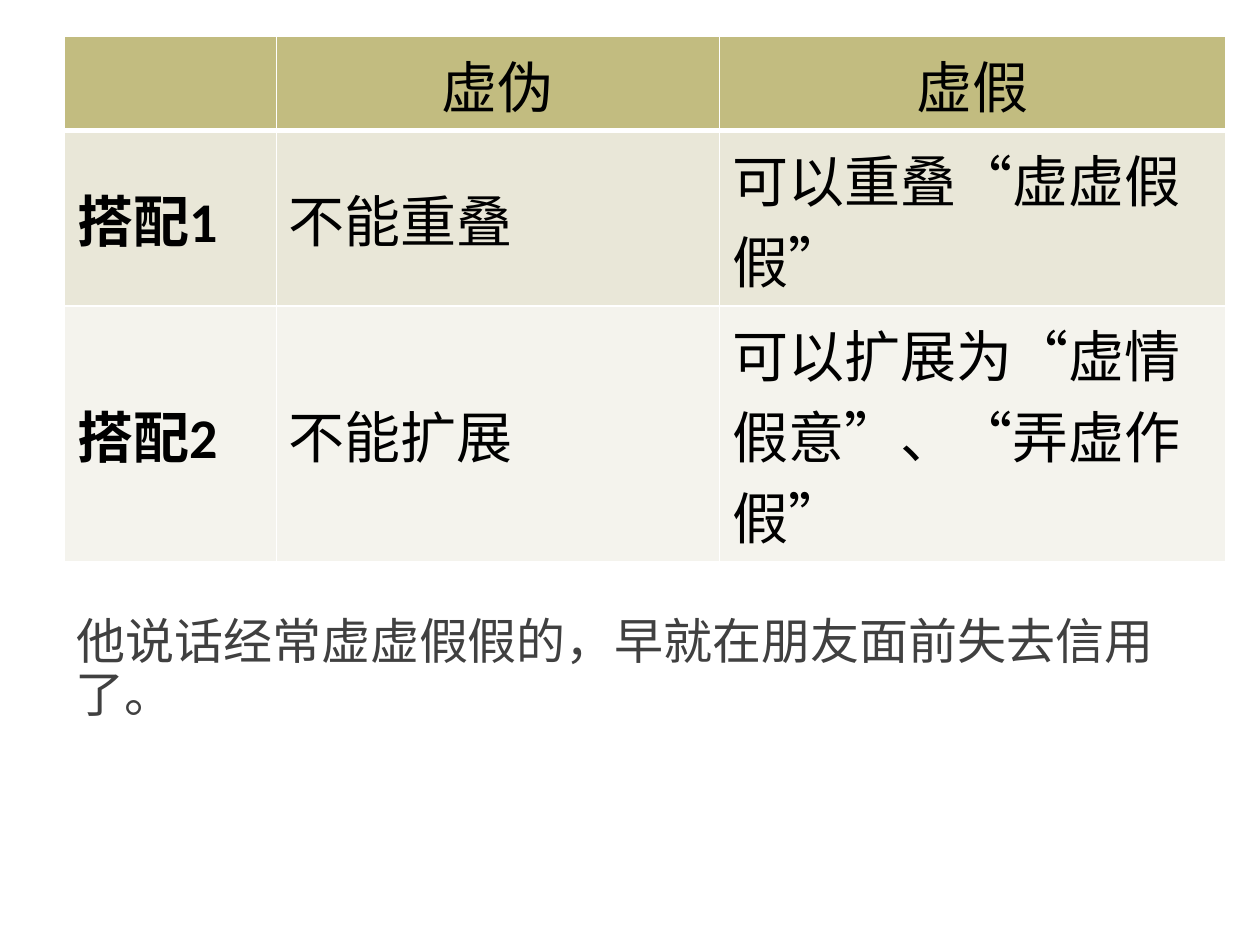
from lxml import etree
from pptx import Presentation
from pptx.dml.color import RGBColor
from pptx.enum.text import MSO_ANCHOR, MSO_AUTO_SIZE, PP_ALIGN
from pptx.oxml.ns import qn
from pptx.util import Cm, Pt

CENTER, LEFT = PP_ALIGN.CENTER, PP_ALIGN.LEFT
TOP, MIDDLE = MSO_ANCHOR.TOP, MSO_ANCHOR.MIDDLE
NO_AUTOFIT = MSO_AUTO_SIZE.NONE

FONT = "Calibri"
COLORS = {
    "header": "C2BC80",
    "odd_row": "E9E7D8",
    "even_row": "F4F3ED",
    "border": "FFFFFF",
    "table_text": "000000",
    "example_text": "404040",
    "bullet": "E48312",
}
HEADER_BORDERS = {"lnL": 1, "lnR": 1, "lnT": 1, "lnB": 3}

COLUMN_WIDTHS = (4.27, 8.94, 10.21)
ROW_HEIGHTS = (1.57, 3.02, 3.02)
ROW_FILLS = ("header", "odd_row", "even_row")
COMPARISON = (
    ("", "虚伪", "虚假"),
    ("搭配1", "不能重叠", "可以重叠“虚虚假假”"),
    ("搭配2", "不能扩展", "可以扩展为“虚情假意”、“弄虚作假”"),
)
EXAMPLE = "他说话经常虚虚假假的，早就在朋友面前失去信用了。"


def write_text(text_frame, text, size, color, bold=False, align=LEFT):
    paragraph = text_frame.paragraphs[0]
    paragraph.alignment = align
    run = paragraph.add_run()
    run.text = text
    run.font.name = FONT
    run.font.size = Pt(size)
    run.font.bold = bold
    run.font.color.rgb = RGBColor.from_string(COLORS[color])
    return paragraph


def add_color(parent, color):
    etree.SubElement(parent, qn("a:srgbClr"), val=COLORS[color])


def set_borders(cell, borders):
    """Put the border lines ahead of the cell's fill, as the schema asks."""
    properties = cell._tc.get_or_add_tcPr()
    for position, (side, width) in enumerate(borders.items()):
        line = etree.Element(qn(f"a:{side}"), w=str(Pt(width)))
        add_color(etree.SubElement(line, qn("a:solidFill")), "border")
        properties.insert(position, line)


def set_bullet(paragraph, character, color, indent):
    properties = paragraph._p.get_or_add_pPr()
    properties.set("marL", str(indent))
    properties.set("indent", str(-indent))
    add_color(etree.SubElement(properties, qn("a:buClr")), color)
    etree.SubElement(properties, qn("a:buChar"), char=character)


def add_comparison_table(slide):
    frame = slide.shapes.add_table(
        len(ROW_HEIGHTS), len(COLUMN_WIDTHS), Cm(1.3), Cm(0.74),
        Cm(sum(COLUMN_WIDTHS)), Cm(sum(ROW_HEIGHTS)))
    table = frame.table
    for column, width in zip(table.columns, COLUMN_WIDTHS):
        column.width = Cm(width)
    for row, height in zip(table.rows, ROW_HEIGHTS):
        row.height = Cm(height)

    for row_index, texts in enumerate(COMPARISON):
        is_header = row_index == 0
        for column_index, text in enumerate(texts):
            cell = table.cell(row_index, column_index)
            cell.vertical_anchor = MIDDLE
            cell.fill.solid()
            cell.fill.fore_color.rgb = RGBColor.from_string(
                COLORS[ROW_FILLS[row_index]])
            if is_header:
                set_borders(cell, HEADER_BORDERS)
            if text:
                write_text(cell.text_frame, text, 32, "table_text",
                           bold=column_index == 0,
                           align=CENTER if is_header else LEFT)


def fill_example(body):
    body.left, body.top = Cm(1.27), Cm(12.32)
    body.width, body.height = Cm(22.86), Cm(4.7)
    text_frame = body.text_frame
    text_frame.word_wrap = True
    text_frame.auto_size = NO_AUTOFIT
    text_frame.vertical_anchor = TOP
    text_frame.margin_left = text_frame.margin_right = 0
    text_frame.margin_top = text_frame.margin_bottom = Cm(0.13)
    paragraph = write_text(text_frame, EXAMPLE, 28, "example_text")
    paragraph.line_spacing = 0.9
    paragraph.space_before = Pt(12)
    paragraph.space_after = Pt(2)
    set_bullet(paragraph, " ", "bullet", Cm(0.25))


def main():
    presentation = Presentation()
    presentation.slide_width, presentation.slide_height = Cm(25.4), Cm(19.05)
    slide = presentation.slides.add_slide(presentation.slide_layouts[1])

    # The slide has no title
    title = slide.shapes.title
    title.element.getparent().remove(title.element)

    # Example sentence below, word comparison above
    fill_example(slide.placeholders[1])
    add_comparison_table(slide)

    presentation.save("out.pptx")


if __name__ == "__main__":
    main()
